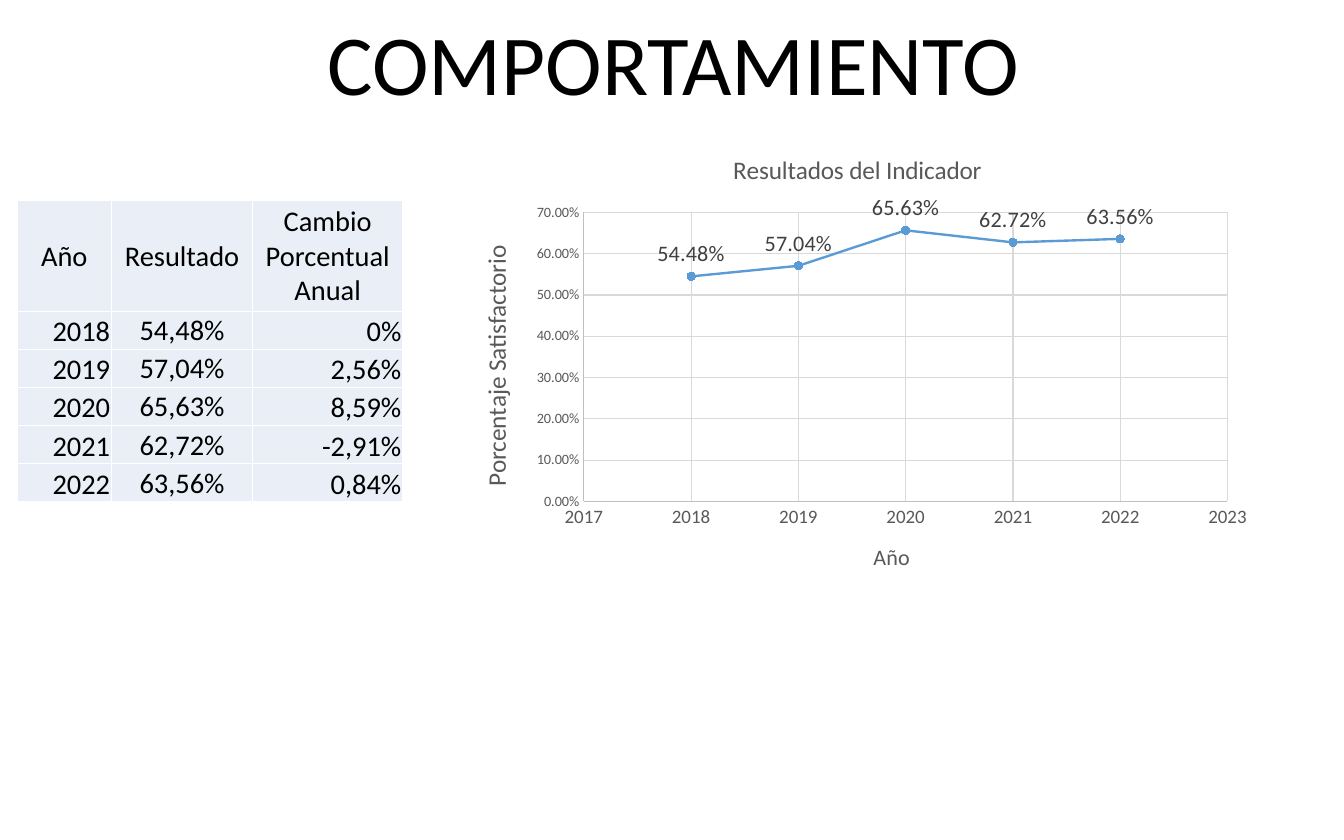
from pptx import Presentation
from pptx import util as u
from pptx.chart.data import XyChartData
from pptx.chart.datalabel import DataLabels
from pptx.dml.color import RGBColor
from pptx.enum import chart as ch, text
from pptx.oxml import parse_xml
from pptx.oxml.ns import nsdecls

RESULTS = [
    (2018, 0.5448, "0%"),
    (2019, 0.5704, "2,56%"),
    (2020, 0.6563, "8,59%"),
    (2021, 0.6272, "-2,91%"),
    (2022, 0.6356, "0,84%"),
]
HEADINGS = ["Año", "Resultado", "Cambio Porcentual Anual"]


def color(hex_code):
    """Turn a hex string into a colour."""
    return RGBColor.from_string(hex_code)


def set_font(font, size, ink):
    """Give a font its size and colour in regular Calibri."""
    font.name, font.size, font.bold = "Calibri", u.Pt(size), False
    font.color.rgb = color(ink)


def write(frame, words, size=18, ink="000000", align=text.PP_ALIGN.CENTER):
    """Put one formatted paragraph into a text frame."""
    paragraph = frame.paragraphs[0]
    paragraph.alignment = align
    run = paragraph.add_run()
    run.text = words
    set_font(run.font, size, ink)


def set_line(line, ink, width):
    """Give a line its colour and width."""
    line.color.rgb = color(ink)
    line.width = u.Pt(width)


def add_heading(slide, left, top, width, height):
    """Write the slide heading in its box."""
    frame = slide.shapes.add_textbox(left, top, width, height).text_frame
    frame.word_wrap = False
    frame.auto_size = text.MSO_AUTO_SIZE.SHAPE_TO_FIT_TEXT
    write(frame, "COMPORTAMIENTO", size=54)


def style_cell(cell, words, align, anchor):
    """Fill, border and write one table cell."""
    cell.margin_left = cell.margin_right = cell.margin_top = u.Cm(0.03)
    cell.margin_bottom = 0
    cell.vertical_anchor = anchor
    properties = cell._tc.get_or_add_tcPr()
    for side in ("lnL", "lnR", "lnT", "lnB"):
        properties.append(parse_xml(
            f'<a:{side} {nsdecls("a")} w="12700"><a:solidFill>'
            f'<a:srgbClr val="FFFFFF"/></a:solidFill></a:{side}>'))
    cell.fill.solid()
    cell.fill.fore_color.rgb = color("EAEFF7")
    write(cell.text_frame, words, align=align)


def add_results_table(slide, left, top, width, height):
    """Tabulate the yearly results and their changes."""
    rows = [HEADINGS] + [
        [str(year), f"{result:.2%}".replace(".", ","), change]
        for year, result, change in RESULTS]
    table = slide.shapes.add_table(
        len(rows), len(HEADINGS), left, top, width, height).table
    table.first_row = table.horz_banding = False
    for column, share in zip(table.columns, (0.245, 0.366, 0.389)):
        column.width = int(width * share)
    year_height = u.Cm(0.85)
    for row_index, values in enumerate(rows):
        table.rows[row_index].height = (
            year_height if row_index else height - year_height * len(RESULTS))
        for column_index, words in enumerate(values):
            centred = row_index == 0 or column_index == 1
            style_cell(
                table.cell(row_index, column_index), words,
                text.PP_ALIGN.CENTER if centred else text.PP_ALIGN.RIGHT,
                text.MSO_ANCHOR.MIDDLE if centred else text.MSO_ANCHOR.BOTTOM)


def style_axis(axis, title, title_size, label_size, scale, number_format):
    """Set an axis title, scale, labels and lines."""
    axis.minimum_scale, axis.maximum_scale, axis.major_unit = scale
    axis.major_tick_mark = axis.minor_tick_mark = ch.XL_TICK_MARK.NONE
    axis.has_major_gridlines = True
    set_line(axis.major_gridlines.format.line, "D9D9D9", 0.75)
    set_line(axis.format.line, "BFBFBF", 0.75)
    set_font(axis.tick_labels.font, label_size, "595959")
    axis.tick_labels.number_format = number_format
    axis.tick_labels.number_format_is_linked = False
    write(axis.axis_title.text_frame, title, size=title_size, ink="595959")


def add_results_chart(slide, left, top, width, height):
    """Plot the indicator results by year."""
    data = XyChartData(number_format="0.00%")
    indicator = data.add_series("Series 1")
    for year, result, _ in RESULTS:
        indicator.add_data_point(year, result)
    chart = slide.shapes.add_chart(
        ch.XL_CHART_TYPE.XY_SCATTER_LINES, left, top, width, height, data).chart
    set_font(chart.font, 10, "000000")
    chart.has_legend = False
    chart.has_title = True
    write(chart.chart_title.text_frame, "Resultados del Indicador",
          size=16, ink="595959")

    style_axis(chart.category_axis, "Año", 14, 12, (2017, 2023, 1), "General")
    style_axis(chart.value_axis, "Porcentaje Satisfactorio", 16, 9,
               (0, 0.7, 0.1), "0.00%")
    for body in chart.value_axis.axis_title._element.xpath(".//a:bodyPr"):
        body.set("rot", "-5400000")
        body.set("vert", "horz")

    plot = chart.plots[0]
    plot.vary_by_categories = False
    curve = plot.series[0]
    set_line(curve.format.line, "5B9BD5", 1.5)
    curve.marker.style = ch.XL_MARKER_STYLE.CIRCLE
    curve.marker.size = 5
    curve.marker.format.fill.solid()
    curve.marker.format.fill.fore_color.rgb = color("5B9BD5")
    set_line(curve.marker.format.line, "5B9BD5", 0.75)
    labels = DataLabels(curve._element.get_or_add_dLbls())
    labels.show_value = True
    labels.position = ch.XL_LABEL_POSITION.ABOVE
    labels.number_format = "0.00%"
    labels.number_format_is_linked = False
    set_font(labels.font, 14, "404040")

    area = chart._chartSpace.chart.plotArea
    for layout in area.xpath("c:layout"):
        area.remove(layout)
    places = {"x": 0.16, "y": 0.17, "w": 0.8, "h": 0.62}
    area.insert(0, parse_xml(
        f'<c:layout {nsdecls("c")}><c:manualLayout>'
        '<c:layoutTarget val="inner"/><c:xMode val="edge"/><c:yMode val="edge"/>'
        + "".join(f'<c:{key} val="{part}"/>' for key, part in places.items())
        + "</c:manualLayout></c:layout>"))


def main():
    """Build and save the slide."""
    deck = Presentation()
    deck.slide_width, deck.slide_height = u.Cm(30), u.Cm(18.75)
    slide = deck.slides.add_slide(deck.slide_layouts[6])
    add_heading(slide, u.Cm(6.98), u.Cm(0.1), u.Cm(16.1), u.Cm(2.56))
    add_results_chart(slide, u.Cm(10.16), u.Cm(2.97), u.Cm(17.96), u.Cm(10.41))
    add_results_table(slide, u.Cm(0.38), u.Cm(4.47), u.Cm(8.61), u.Cm(6.73))
    deck.save("out.pptx")


if __name__ == "__main__":
    main()
